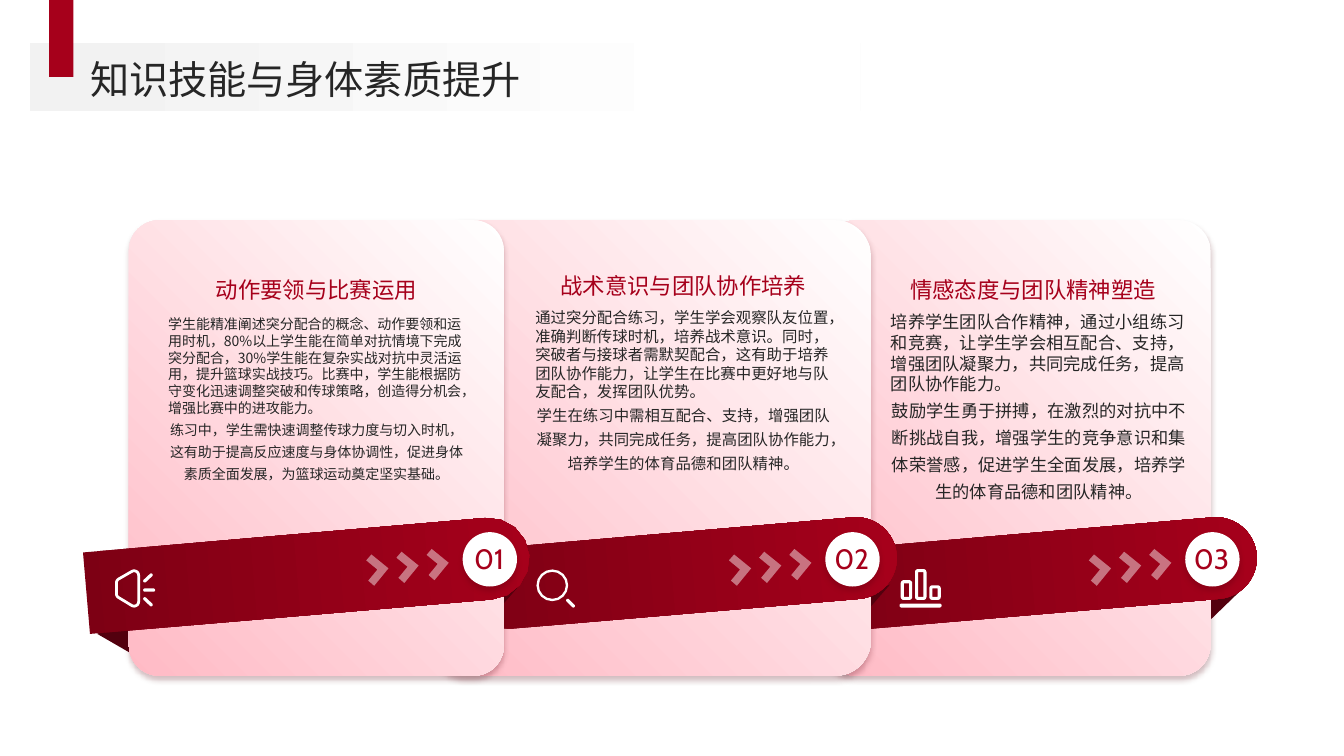
from math import atan2, cos, pi, radians, sin, tau
from typing import NamedTuple

from lxml.etree import SubElement
from pptx import Presentation
from pptx.dml.color import RGBColor
from pptx.enum.shapes import MSO_SHAPE as Preset
from pptx.enum.text import MSO_ANCHOR as Anchor, PP_ALIGN as Align
from pptx.oxml.ns import qn
from pptx.util import Cm, Pt

WHITE = RGBColor(0xFF, 0xFF, 0xFF)
GREY = RGBColor(0xF2, 0xF2, 0xF2)
INK = RGBColor(0x26, 0x26, 0x26)
PINK = RGBColor(0xFF, 0xBA, 0xC5)
RED = RGBColor(0xA6, 0x00, 0x1B)
DARK_RED = RGBColor(0x7D, 0x00, 0x14)
FOLD_RED = RGBColor(0x53, 0x00, 0x0E)

CHINESE = "Noto Sans CJK SC"
NUMERALS = "Cabin"
ARC_STEPS = 16
RIBBON_TURN = 355.1
RIBBON_HEIGHT = 2.06
DISC_SIZE = 1.37


class Card(NamedTuple):
    number: str
    title: str
    body: tuple
    body_size: float
    panel: tuple
    disc_left: float
    fold: tuple
    title_at: tuple
    body_box: tuple


CARDS = [
    Card("01", "动作要领与比赛运用",
         ("学生能精准阐述突分配合的概念、动作要领和运用时机，80%以上学生能在简单对抗情境下完成突分配合，30%学生能在复杂实战对抗中灵活运用，提升篮球实战技巧。比赛中，学生能根据防守变化迅速调整突破和传球策略，创造得分机会，增强比赛中的进攻能力。",
          "练习中，学生需快速调整传球力度与切入时机，这有助于提高反应速度与身体协调性，促进身体素质全面发展，为篮球运动奠定坚实基础。"),
         10, (3.25, 9.45), 11.66, (12.22, 0.89), (4.24, 6.23), (4.24, 7.95, 7.47, 4.88)),
    Card("02", "战术意识与团队协作培养",
         ("通过突分配合练习，学生学会观察队友位置，准确判断传球时机，培养战术意识。同时，突破者与接球者需默契配合，这有助于培养团队协作能力，让学生在比赛中更好地与队友配合，发挥团队优势。",
          "学生在练习中需相互配合、支持，增强团队凝聚力，共同完成任务，提高团队协作能力，培养学生的体育品德和团队精神。"),
         11, (10.85, 11.1), 20.8, (21.54, 0.89), (13.49, 6.13), (13.49, 7.77, 7.47, 5.03)),
    Card("03", "情感态度与团队精神塑造",
         ("培养学生团队合作精神，通过小组练习和竞赛，让学生学会相互配合、支持，增强团队凝聚力，共同完成任务，提高团队协作能力。",
          "鼓励学生勇于拼搏，在激烈的对抗中不断挑战自我，增强学生的竞争意识和集体荣誉感，促进学生全面发展，培养学生的体育品德和团队精神。"),
         12.3, (20.78, 9.73), 29.87, (30.38, 1.04), (22.3, 6.23), (22.45, 7.85, 7.47, 5.08)),
]


def rounded(corners, radius):
    points = []
    for index, (x, y) in enumerate(corners):
        before_x, before_y = corners[index - 1]
        after_x, after_y = corners[(index + 1) % len(corners)]
        arriving = atan2(y - before_y, x - before_x)
        leaving = atan2(after_y - y, after_x - x)
        sweep = (leaving - arriving) % tau or tau
        for step in range(ARC_STEPS + 1):
            angle = arriving - pi / 2 + sweep * step / ARC_STEPS
            points.append((x + radius * cos(angle), y + radius * sin(angle)))
    return points


def rotate(x, y, degrees):
    angle = radians(degrees)
    return x * cos(angle) - y * sin(angle), x * sin(angle) + y * cos(angle)


def unturned(contours, degrees):
    level = [[rotate(x, y, -degrees) for x, y in contour] for contour in contours]
    xs, ys = zip(*(point for contour in level for point in contour))
    middle_x, middle_y = (min(xs) + max(xs)) / 2, (min(ys) + max(ys)) / 2
    center_x, center_y = rotate(middle_x, middle_y, degrees)
    return [[(x + center_x - middle_x, y + center_y - middle_y) for x, y in contour]
            for contour in level]


def paint(shape, fill, angle=0, stops=(0, 1)):
    shape.shadow.inherit = False
    shape.line.fill.background()
    if isinstance(fill, RGBColor):
        shape.fill.solid()
        shape.fill.fore_color.rgb = fill
        return
    shape.fill.gradient()
    shape.fill.gradient_angle = angle
    for stop, color, position in zip(shape.fill.gradient_stops, fill, stops):
        stop.color.rgb = color
        stop.position = position


def add_preset(slide, preset, box, fill, rotation=0, **gradient):
    shape = slide.shapes.add_shape(preset, *map(Cm, box))
    shape.rotation = rotation
    paint(shape, fill, **gradient)
    return shape


def add_outline(slide, contours, fill, rotation=0):
    starts = [[(Cm(x), Cm(y)) for x, y in contour] for contour in contours]
    builder = slide.shapes.build_freeform(*starts[0][0])
    builder.add_line_segments(starts[0][1:], close=True)
    for contour in starts[1:]:
        builder.move_to(*contour[0])
        builder.add_line_segments(contour[1:], close=True)
    shape = builder.convert_to_shape()
    shape.rotation = rotation
    paint(shape, fill)
    return shape


def add_shadow(shape):
    effects = shape._element.spPr.find(qn("a:effectLst"))
    shadow = SubElement(effects, qn("a:outerShdw"), blurRad=str(Pt(4)), dist=str(Pt(3)),
                        dir="5400000", algn="t", rotWithShape="0")
    color = SubElement(shadow, qn("a:srgbClr"), val=str(FOLD_RED))
    SubElement(color, qn("a:alpha"), val="25000")


def add_text(slide, box, texts, size, color, font=CHINESE, anchor=Anchor.BOTTOM,
             styles=((Align.CENTER, 1.1),)):
    frame = slide.shapes.add_textbox(*map(Cm, box)).text_frame
    frame.word_wrap = True
    frame.vertical_anchor = anchor
    frame.margin_left = frame.margin_right = frame.margin_top = frame.margin_bottom = 0
    frame.text = "\n".join(texts)
    for paragraph, (alignment, spacing) in zip(frame.paragraphs, styles):
        paragraph.alignment = alignment
        paragraph.line_spacing = spacing
        paragraph.font.size = Pt(size)
        paragraph.font.color.rgb = color
        paragraph.font.name = font
        SubElement(paragraph.font._element, qn("a:ea"), typeface=font)


def add_ribbon(slide, card):
    colors = (DARK_RED, RED)
    if card.number == "01":
        left, top, length = 2.16, 13.44, 11.2
        radius = RIBBON_HEIGHT / 2
        cap = rounded([(left + length - radius, top + radius)], radius)[:ARC_STEPS // 2 + 1]
        points = [(left, top), *cap, (left, top + RIBBON_HEIGHT)]
        add_outline(slide, [points], colors, RIBBON_TURN)
    else:
        box = card.disc_left - 9.03, 13.41, 10.85, RIBBON_HEIGHT
        ribbon = add_preset(slide, Preset.ROUNDED_RECTANGLE, box, colors, RIBBON_TURN)
        ribbon.adjustments[0] = 0.5


def add_chevrons(slide, left):
    chevron = [(0.13, -0.15), (0.56, 0.2), (0.2, 0.64), (0.05, 0.51), (0.28, 0.23), (0, 0)]
    contours = [[(left + 0.76 * i + x, 14.12 - 0.07 * i + y) for x, y in chevron]
                for i in range(3)]
    shape = add_outline(slide, unturned(contours, 220.2), WHITE, 220.2)
    color = shape._element.spPr.find(qn("a:solidFill"))[0]
    SubElement(color, qn("a:alpha"), val="45000")


def speaker_icon():
    body = [(3.38, 14.5), (3.38, 15.16), (3.05, 14.96), (3.05, 14.69)]
    waves = [((3.65, 14.64), (3.81, 14.49)), ((3.65, 14.87), (3.87, 14.87)),
             ((3.65, 15.09), (3.81, 15.24))]
    return [rounded(body, 0.15), rounded(body, 0.08)] + [rounded(wave, 0.04) for wave in waves]


def lens_icon():
    center = [(13.92, 14.75)]
    handle = [(14.31, 15.13), (14.45, 15.27)]
    return [rounded(center, 0.4), rounded(center, 0.34), rounded(handle, 0.04)]


def bars_icon():
    contours = [rounded([(22.72, 15.26), (23.68, 15.26)], 0.05)]
    for index, top in enumerate((14.7, 14.42, 14.83)):
        left = 22.78 + 0.36 * index
        core = [(left, top), (left + 0.13, top), (left + 0.13, 15.04), (left, 15.04)]
        contours += [rounded(core, 0.08), core]
    return contours


def add_card(slide, card, icon):
    tip, width = card.fold
    fold = [(tip, 15.11), (tip + width, 14.73), (tip + 0.07, 15.67)]
    add_outline(slide, unturned([fold], 30), FOLD_RED, 30)
    left, width = card.panel
    panel = add_preset(slide, Preset.ROUNDED_RECTANGLE, (left, 5.55, width, 11.48),
                       (WHITE, PINK), angle=225)
    panel.adjustments[0] = 0.081
    add_shadow(panel)
    add_ribbon(slide, card)
    add_shadow(add_preset(slide, Preset.OVAL, (card.disc_left, 13.41, DISC_SIZE, DISC_SIZE), WHITE))
    add_text(slide, (*card.title_at, 7.47, 1.4), [card.title], 16, RED)
    add_text(slide, card.body_box, card.body, card.body_size, INK, anchor=Anchor.TOP,
             styles=((Align.LEFT, 1.0), (Align.CENTER, 1.3)))
    add_text(slide, (card.disc_left - 0.4, 13.08, 2.13, 1.4), [card.number], 20, RED, NUMERALS)
    add_outline(slide, icon, WHITE)
    add_chevrons(slide, card.disc_left - 2.43)


def main():
    presentation = Presentation()
    presentation.slide_width, presentation.slide_height = Cm(33.87), Cm(19.05)
    slide = presentation.slides.add_slide(presentation.slide_layouts[6])
    add_preset(slide, Preset.ISOSCELES_TRIANGLE, (2.57, 15.52, 1.14, 0.79), FOLD_RED, 30)
    icons = speaker_icon(), lens_icon(), bars_icon()
    for card, icon in reversed(list(zip(CARDS, icons))):
        add_card(slide, card, icon)
    add_preset(slide, Preset.RECTANGLE, (0.76, 1.09, 20.93, 1.7), (GREY, WHITE), stops=(0.05, 0.84))
    add_preset(slide, Preset.RECTANGLE, (1.24, 0, 0.61, 1.94), RED)
    add_text(slide, (2.27, 1.28, 29.72, 1.3), ["知识技能与身体素质提升"], 28, INK,
             anchor=Anchor.MIDDLE, styles=((Align.LEFT, 1.1),))
    presentation.save("out.pptx")


if __name__ == "__main__":
    main()
